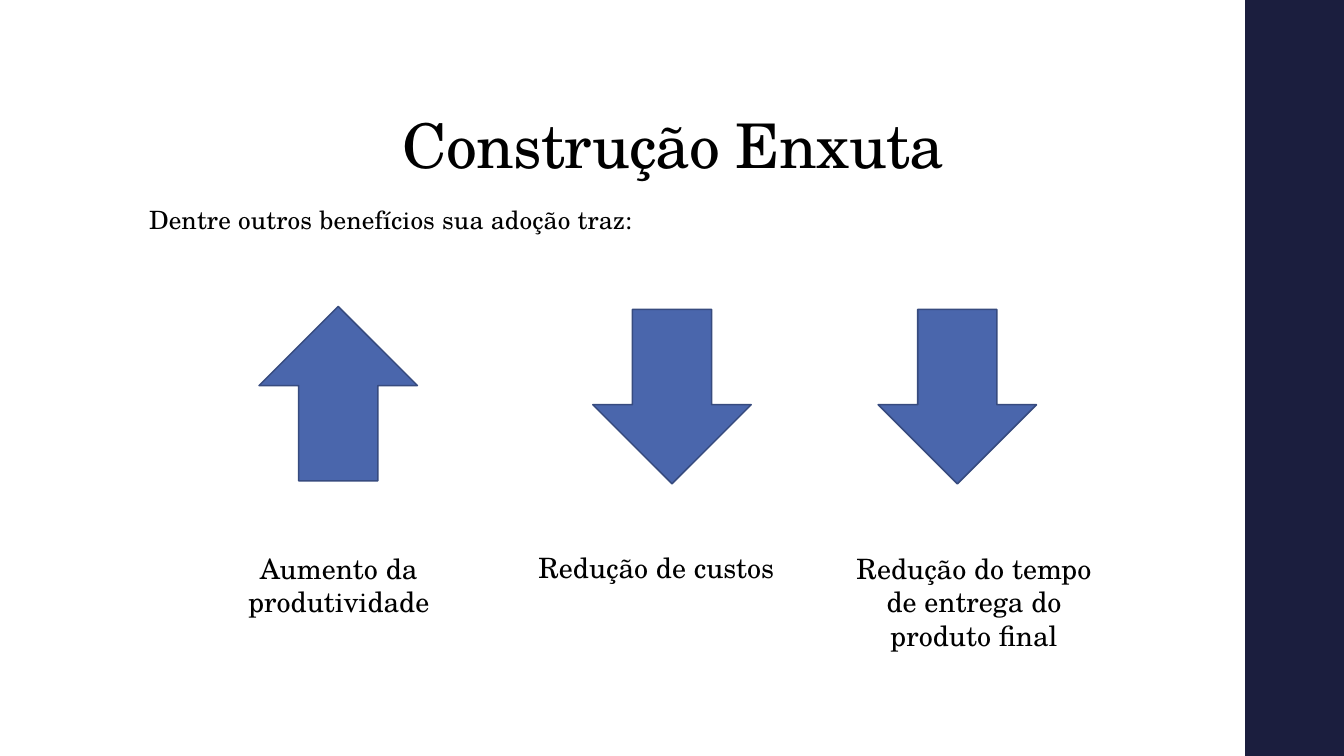
from dataclasses import dataclass

from pptx import Presentation
from pptx.dml.color import RGBColor
from pptx.enum.shapes import MSO_SHAPE as Shape
from pptx.enum.text import MSO_ANCHOR as Anchor, MSO_AUTO_SIZE as AutoSize, PP_ALIGN as Align
from pptx.slide import Slide
from pptx.text.text import TextFrame
from pptx.util import Inches, Pt

FONT = "TeX Gyre Schola"
COLORS = {
    "text": "000000",
    "band": "1B1E3E",
    "arrow": "4A66AC",
    "arrow_line": "374B7F",
}
ARROW_SIZE = (1.57, 1.73)
CAPTION_WIDTH = 2.68


@dataclass
class Benefit:
    caption: str
    arrow_left: float
    arrow_top: float
    rotation: int
    caption_left: float
    caption_top: float
    caption_height: float


BENEFITS = [
    Benefit("Aumento da produtividade", 2.57, 3.04, 0, 2.02, 5.42, 0.77),
    Benefit("Redução de custos", 5.88, 3.07, 180, 5.17, 5.41, 0.44),
    Benefit("Redução do tempo de entrega do produto final", 8.71, 3.07, 180, 8.32, 5.42, 1.11),
]


def color(name: str) -> RGBColor:
    return RGBColor.from_string(COLORS[name])


def write(frame: TextFrame, text: str, size: int, tracking: int = 0, **paragraph_format) -> None:
    """Fill a frame with one paragraph; tracking is in hundredths of a point."""
    frame.word_wrap = True
    paragraph = frame.paragraphs[0]
    for name, value in paragraph_format.items():
        setattr(paragraph, name, value)
    run = paragraph.add_run()
    run.text = text
    for name, value in {"name": FONT, "size": Pt(size)}.items():
        setattr(run.font, name, value)
    run.font.color.rgb = color("text")
    if tracking:
        run._r.get_or_add_rPr().set("spc", str(tracking))


def add_band(slide: Slide) -> None:
    band = slide.shapes.add_shape(Shape.RECTANGLE, *map(Inches, (12.35, 0, 0.98, 7.5)))
    band.shadow.inherit = False
    band.fill.solid()
    band.fill.fore_color.rgb = color("band")
    band.line.fill.background()


def add_title(slide: Slide) -> None:
    title = slide.shapes.title
    bounds = {"left": 1.38, "top": 0.4, "width": 10.6, "height": 1.45}
    for name, value in bounds.items():
        setattr(title, name, Inches(value))
    title.text_frame.vertical_anchor = Anchor.BOTTOM
    title.text_frame.auto_size = AutoSize.NONE
    write(title.text_frame, "Construção Enxuta", 44, -50,
          alignment=Align.CENTER, line_spacing=0.9)


def add_introduction(slide: Slide) -> None:
    box = slide.shapes.add_textbox(*map(Inches, (1.38, 2, 9.4, 4.76)))
    write(box.text_frame, "Dentre outros benefícios sua adoção traz:", 18, 10,
          alignment=Align.JUSTIFY, line_spacing=0.95,
          space_before=Pt(14), space_after=Pt(2))


def add_benefit(slide: Slide, benefit: Benefit) -> None:
    arrow = slide.shapes.add_shape(
        Shape.UP_ARROW, *map(Inches, (benefit.arrow_left, benefit.arrow_top, *ARROW_SIZE)))
    arrow.rotation = benefit.rotation
    arrow.shadow.inherit = False
    arrow.fill.solid()
    arrow.fill.fore_color.rgb = color("arrow")
    arrow.line.color.rgb = color("arrow_line")
    arrow.line.width = Pt(1.1)

    caption = slide.shapes.add_textbox(*map(Inches, (
        benefit.caption_left, benefit.caption_top, CAPTION_WIDTH, benefit.caption_height)))
    caption.text_frame.auto_size = AutoSize.SHAPE_TO_FIT_TEXT
    write(caption.text_frame, benefit.caption, 20, alignment=Align.CENTER)


def main() -> None:
    presentation = Presentation()
    presentation.slide_width = Inches(13.33)
    presentation.slide_height = Inches(7.5)
    slide = presentation.slides.add_slide(presentation.slide_layouts.get_by_name("Title Only"))
    add_band(slide)
    add_title(slide)
    add_introduction(slide)
    for benefit in BENEFITS:
        add_benefit(slide, benefit)
    presentation.save("out.pptx")


if __name__ == "__main__":
    main()
